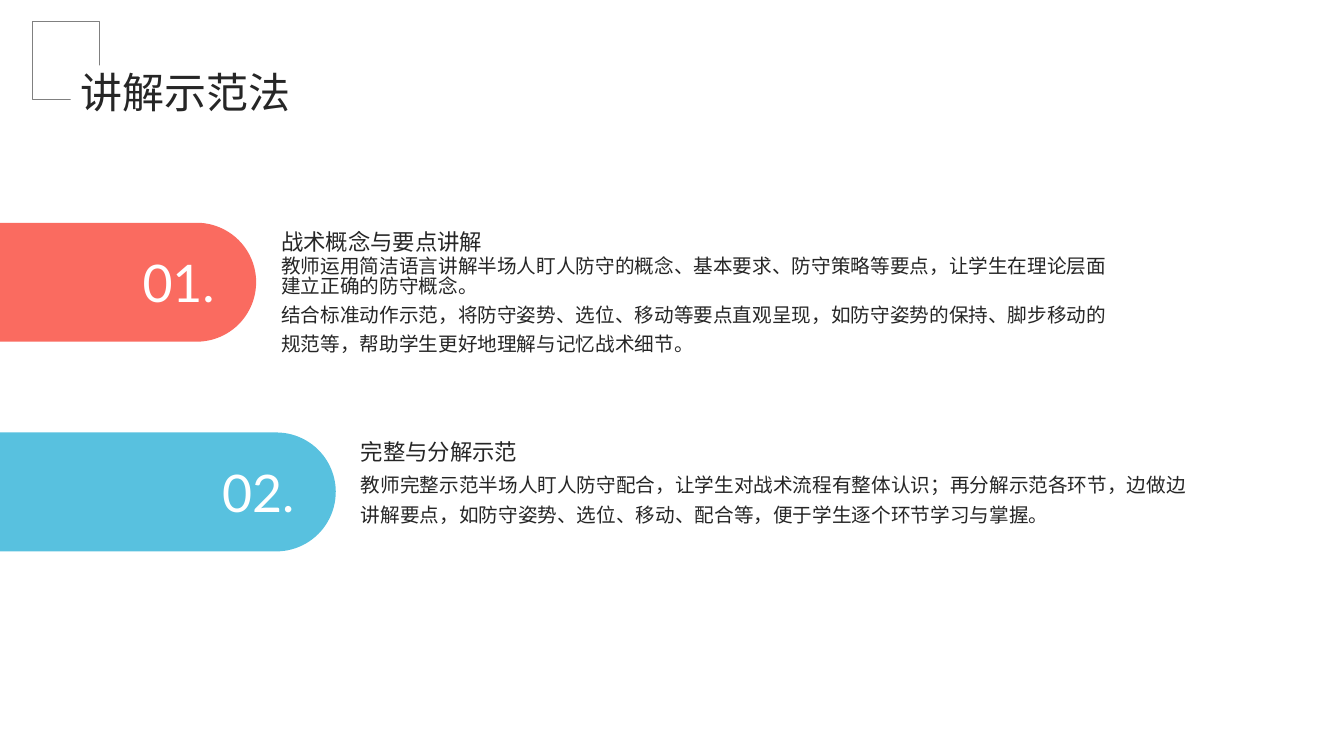
import pptx
import pptx.util
from pptx.dml.color import RGBColor
from pptx.enum.shapes import MSO_SHAPE
from pptx.enum.text import MSO_ANCHOR, PP_ALIGN
from pptx.oxml.ns import qn
from pptx.util import Inches

CORAL = RGBColor(0xFA, 0x6B, 0x60)
SKY = RGBColor(0x58, 0xC1, 0xDF)
INK = RGBColor(0x26, 0x26, 0x26)
GRAY = RGBColor(0x80, 0x80, 0x80)
WHITE = RGBColor(0xFF, 0xFF, 0xFF)
CJK = "Noto Sans CJK SC"
LATIN = "Lato"

PILL_HEIGHT = 1.18
TEXT_WIDTH = 8.27

# number, colour, pill top, pill length, heading, [(paragraph, line spacing)]
METHODS = [
    ("01.", CORAL, 2.21, 2.54, "战术概念与要点讲解", [
        ("教师运用简洁语言讲解半场人盯人防守的概念、基本要求、防守策略等要点，"
         "让学生在理论层面建立正确的防守概念。", 0.83),
        ("结合标准动作示范，将防守姿势、选位、移动等要点直观呈现，"
         "如防守姿势的保持、脚步移动的规范等，帮助学生更好地理解与记忆战术细节。", 1.24),
    ]),
    ("02.", SKY, 4.29, 3.33, "完整与分解示范", [
        ("教师完整示范半场人盯人防守配合，让学生对战术流程有整体认识；再分解示范各环节，"
         "边做边讲解要点，如防守姿势、选位、移动、配合等，便于学生逐个环节学习与掌握。", 1.24),
    ]),
]


def add_text(slide, left, top, width, height, paragraphs, size, font=CJK,
             color=INK, anchor=MSO_ANCHOR.TOP, align=PP_ALIGN.LEFT):
    """Add a text box without margins; paragraphs are (text, line spacing) pairs."""
    box = slide.shapes.add_textbox(
        Inches(left), Inches(top), Inches(width), Inches(height))
    frame = box.text_frame
    frame.word_wrap = True
    frame.vertical_anchor = anchor
    frame.margin_left = frame.margin_right = 0
    frame.margin_top = frame.margin_bottom = 0
    for index, (text, spacing) in enumerate(paragraphs):
        paragraph = frame.add_paragraph() if index else frame.paragraphs[0]
        paragraph.alignment = align
        paragraph.line_spacing = spacing
        run = paragraph.add_run()
        run.text = text
        run.font.size = pptx.util.Pt(size)
        run.font.name = font
        run.font.color.rgb = color
        properties = run.font._element
        properties.set("lang", "zh-CN")
        east_asian = properties.makeelement(qn("a:ea"), {"typeface": font})
        properties.find(qn("a:latin")).addnext(east_asian)


def add_shape(slide, kind, left, top, width, height, fill=None, line=None):
    shape = slide.shapes.add_shape(
        kind, Inches(left), Inches(top), Inches(width), Inches(height))
    shape.shadow.inherit = False
    if fill is None:
        shape.fill.background()
    else:
        shape.fill.solid()
        shape.fill.fore_color.rgb = fill
    if line is None:
        shape.line.fill.background()
    else:
        shape.line.color.rgb = line
        shape.line.width = pptx.util.Pt(0.75)
    return shape


def add_pill(slide, top, length, color):
    """Add a bar from the left slide edge, rounded at its right end."""
    shift = (length - PILL_HEIGHT) / 2
    pill = add_shape(slide, MSO_SHAPE.ROUND_2_SAME_RECTANGLE,
                     shift, top - shift, PILL_HEIGHT, length, fill=color)
    pill.rotation = 90
    pill.adjustments[0] = 0.5
    pill.adjustments[1] = 0


def add_method(slide, number, color, top, length, heading, body):
    add_pill(slide, top, length, color)
    add_text(slide, length - 1.61, top + 0.28, 1.2, 0.62, [(number, 1.0)], 37,
             LATIN, WHITE, MSO_ANCHOR.MIDDLE, PP_ALIGN.RIGHT)
    text_left = length + 0.25
    add_text(slide, text_left, top + 0.35, TEXT_WIDTH, 1.5, body, 14)
    add_text(slide, text_left, top - 0.11, TEXT_WIDTH, 0.43,
             [(heading, 1.08)], 16, anchor=MSO_ANCHOR.BOTTOM)


def add_title(slide, title):
    """Add the title over a square frame whose corner it interrupts."""
    add_shape(slide, MSO_SHAPE.RECTANGLE, 0.32, 0.21, 0.67, 0.78, line=GRAY)
    add_shape(slide, MSO_SHAPE.RECTANGLE, 0.7, 0.65, 0.61, 0.5, fill=WHITE)
    add_text(slide, 0.8, 0.71, 11.1, 0.46, [(title, 0.91)], 30)


def main():
    presentation = pptx.Presentation()
    presentation.slide_width = Inches(13.33)
    presentation.slide_height = Inches(7.5)
    slide = presentation.slides.add_slide(presentation.slide_layouts[6])
    for method in METHODS:
        add_method(slide, *method)
    add_title(slide, "讲解示范法")
    presentation.save("out.pptx")


if __name__ == "__main__":
    main()
